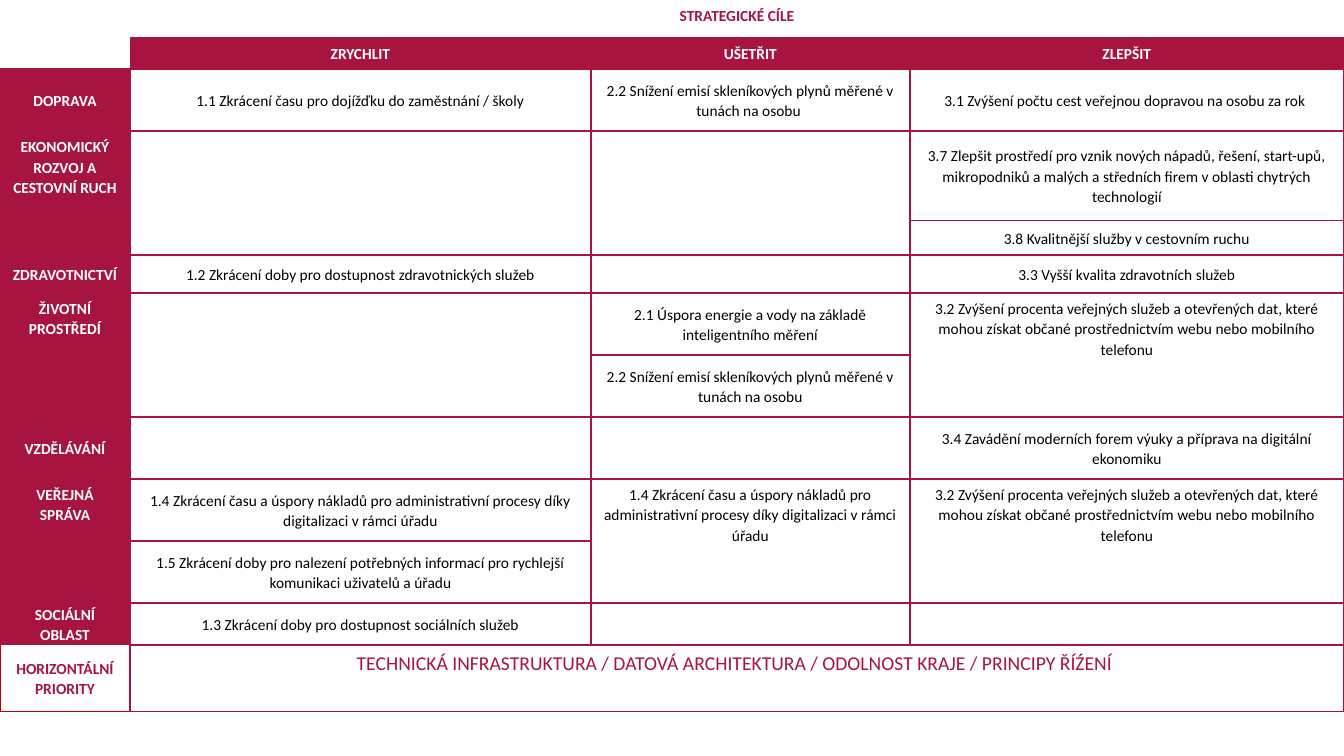
import lxml.etree
import pptx
import pptx.dml.color
import pptx.enum.text
import pptx.oxml.ns
import pptx.util

Pt = pptx.util.Pt
CRIMSON, RED, WHITE, BLACK = "A7143F", "C00000", "FFFFFF", "000000"
ABOVE, LEFT = "above", "left"  # grid entries that continue a neighbouring cell

COLUMN_WIDTHS = [92.9, 329.2, 227.8, 310.1]
ROW_HEIGHTS = [26.7, 21.8, 44.4, 63.7, 25, 26.8] + [44.3] * 5 + [30, 47.6]

GOALS = [
    [None, "STRATEGICKÉ CÍLE", LEFT, LEFT],
    [ABOVE, "ZRYCHLIT", "UŠETŘIT", "ZLEPŠIT"],
    ["DOPRAVA", "1.1 Zkrácení času pro dojížďku do zaměstnání / školy",
     "2.2 Snížení emisí skleníkových plynů měřené v tunách na osobu ",
     "3.1 Zvýšení počtu cest veřejnou dopravou na osobu za rok "],
    ["EKONOMICKÝ ROZVOJ A CESTOVNÍ RUCH", None, None,
     "3.7 Zlepšit prostředí pro vznik nových nápadů, řešení, start-upů, "
     "mikropodniků a malých a středních firem v oblasti chytrých technologií"],
    [ABOVE, ABOVE, ABOVE, "3.8 Kvalitnější služby v cestovním ruchu"],
    ["ZDRAVOTNICTVÍ", "1.2 Zkrácení doby pro dostupnost zdravotnických služeb",
     None, "3.3 Vyšší kvalita zdravotních služeb"],
    ["ŽIVOTNÍ PROSTŘEDÍ", None,
     "2.1 Úspora energie a vody na základě inteligentního měření",
     "3.2 Zvýšení procenta veřejných služeb a otevřených dat, které mohou "
     "získat občané prostřednictvím webu nebo mobilního telefonu"],
    [ABOVE, ABOVE,
     "2.2 Snížení emisí skleníkových plynů měřené v tunách na osobu", ABOVE],
    ["VZDĚLÁVÁNÍ", None, None,
     "3.4 Zavádění moderních forem výuky a příprava na digitální ekonomiku"],
    ["VEŘEJNÁ SPRÁVA",
     "1.4 Zkrácení času a úspory nákladů pro administrativní procesy díky "
     "digitalizaci v rámci úřadu",
     "1.4 Zkrácení času a úspory nákladů pro administrativní procesy díky "
     "digitalizaci v rámci úřadu",
     "3.2 Zvýšení procenta veřejných služeb a otevřených dat, které mohou "
     "získat občané prostřednictvím webu nebo mobilního telefonu"],
    [ABOVE, "1.5 Zkrácení doby pro nalezení potřebných informací pro rychlejší "
     "komunikaci uživatelů a úřadu", ABOVE, ABOVE],
    ["SOCIÁLNÍ OBLAST", "1.3 Zkrácení doby pro dostupnost sociálních služeb",
     None, None],
    ["HORIZONTÁLNÍ PRIORITY",
     "TECHNICKÁ INFRASTRUKTURA / DATOVÁ ARCHITEKTURA / ODOLNOST KRAJE / "
     "PRINCIPY ŘÍŹENÍ ", LEFT, LEFT],
]
HEADER, LAST = 1, len(GOALS) - 1


def rgb(hex_color):
    return pptx.dml.color.RGBColor.from_string(hex_color)


def write(text_frame, text, size=11, color=BLACK, bold=False, font="Calibri"):
    paragraph = text_frame.paragraphs[0]
    paragraph.alignment = pptx.enum.text.PP_ALIGN.CENTER
    paragraph.line_spacing = 1.07
    run = paragraph.add_run()
    run.text = text
    run.font.name, run.font.size, run.font.bold = font, Pt(size), bold
    run.font.color.rgb = rgb(color)


def look(row, column):
    """Return the text format, the fill and the borders for a place in the grid."""
    framed = {edge: (CRIMSON, 1.5) for edge in "LRTB"}
    if row == 0:
        borders = {"B": (CRIMSON, 1)} if column == 0 else {}
        return dict(color=CRIMSON, bold=True), None, borders
    if row == HEADER and column:
        return dict(color=WHITE, bold=True), CRIMSON, {"B": (CRIMSON, 1.5)}
    if row == HEADER:
        return {}, None, {"B": (CRIMSON, 1)}
    if row == LAST and column == 0:
        borders = framed | {"L": (RED, 1.5), "T": (CRIMSON, 1), "B": (RED, 1.5)}
        return dict(color=CRIMSON, bold=True), None, borders
    if row == LAST:
        return dict(color=CRIMSON, size=14), None, framed
    if column == 0:
        borders = {edge: (CRIMSON, 1) for edge in "LRTB"}
        return dict(color=WHITE, bold=True), CRIMSON, borders
    return {}, None, framed | ({"L": (CRIMSON, 1)} if column == 1 else {})


class GoalsSlide:
    def __init__(self, presentation):
        self.slide = presentation.slides.add_slide(presentation.slide_layouts[6])

    def border(self, cell, borders):
        """Draw the given edges and clear the others."""
        qn = pptx.oxml.ns.qn
        properties = cell._tc.get_or_add_tcPr()
        for edge in "LRTB":
            line = lxml.etree.SubElement(properties, qn(f"a:ln{edge}"))
            if edge not in borders:
                lxml.etree.SubElement(line, qn("a:noFill"))
                continue
            color, width = borders[edge]
            line.set("w", str(Pt(width)))
            fill = lxml.etree.SubElement(line, qn("a:solidFill"))
            lxml.etree.SubElement(fill, qn("a:srgbClr")).set("val", color)

    def cell(self, cell, text, roomy, text_format, fill, borders):
        """Format one cell; a roomy cell starts its text at the top."""
        anchors = pptx.enum.text.MSO_ANCHOR
        cell.vertical_anchor = anchors.TOP if roomy else anchors.MIDDLE
        cell.margin_left = cell.margin_right = Pt(7.9 if roomy else 6.2)
        cell.margin_top = Pt(4 if roomy else 0.7)
        cell.margin_bottom = Pt(4 if roomy else 0)
        self.border(cell, borders)
        if fill:
            cell.fill.solid()
            cell.fill.fore_color.rgb = rgb(fill)
        else:
            cell.fill.background()
        if text not in (None, ABOVE, LEFT):
            write(cell.text_frame, text, **text_format)

    def table(self, grid, widths, heights):
        table = self.slide.shapes.add_table(
            len(heights), len(widths), 0, 0, Pt(sum(widths)), Pt(sum(heights))).table
        table.first_row = table.horz_banding = False
        for column, width in zip(table.columns, widths):
            column.width = Pt(width)
        for row, height in zip(table.rows, heights):
            row.height = Pt(height)
        for r, entries in enumerate(grid):
            for c, text in enumerate(entries):
                below = r < LAST and grid[r + 1][c] == ABOVE
                beside = c + 1 < len(entries) and entries[c + 1] == LEFT
                starts_span = text not in (ABOVE, LEFT) and (below or beside)
                roomy = starts_span and text is not None
                self.cell(table.cell(r, c), text, roomy, *look(r, c))
                if starts_span:
                    end = (r + 1, c) if below else (r, len(entries) - 1)
                    table.cell(r, c).merge(table.cell(*end))


def main():
    presentation = pptx.Presentation()
    presentation.slide_width, presentation.slide_height = Pt(960), Pt(540)
    GoalsSlide(presentation).table(GOALS, COLUMN_WIDTHS, ROW_HEIGHTS)
    presentation.save("out.pptx")


if __name__ == "__main__":
    main()
